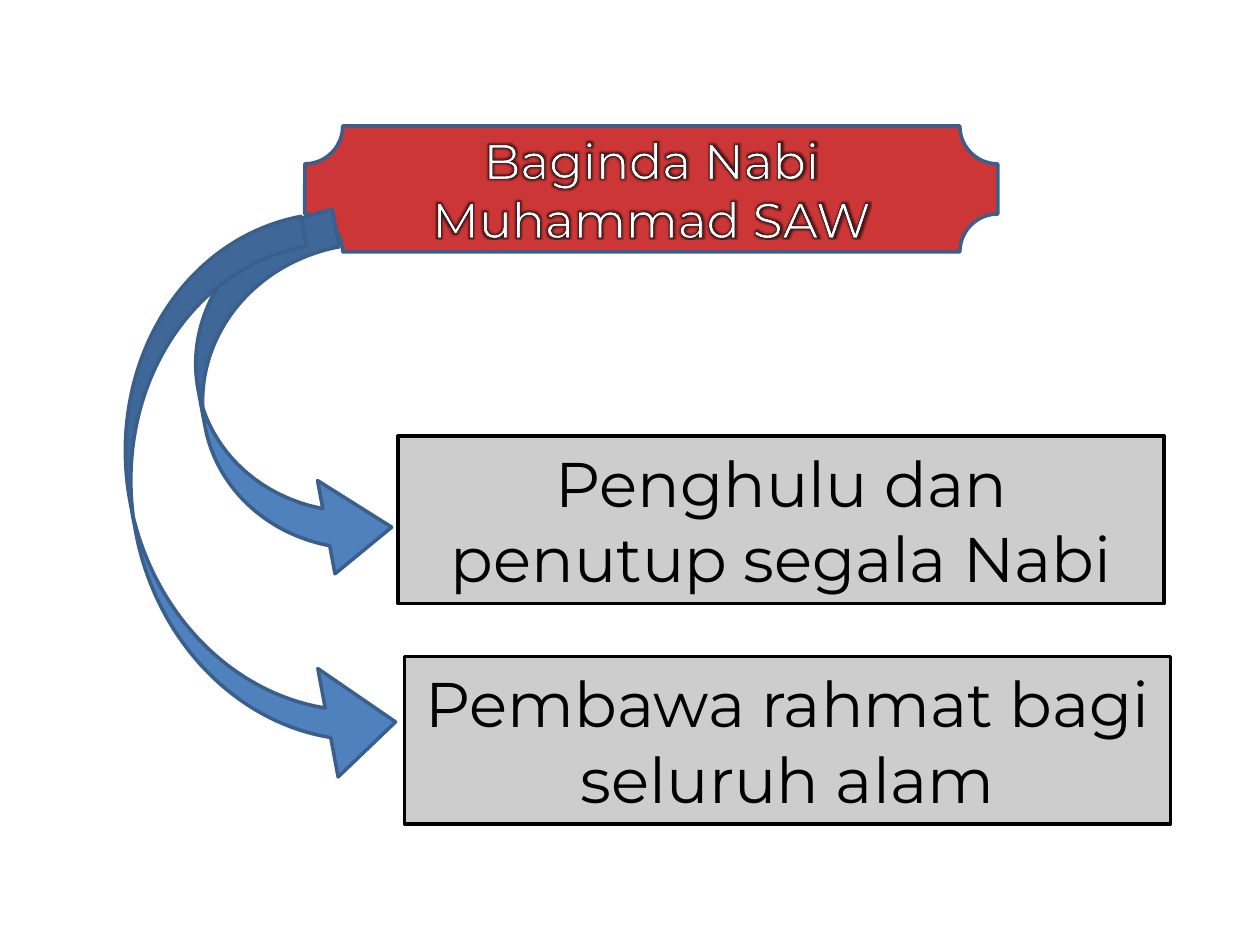
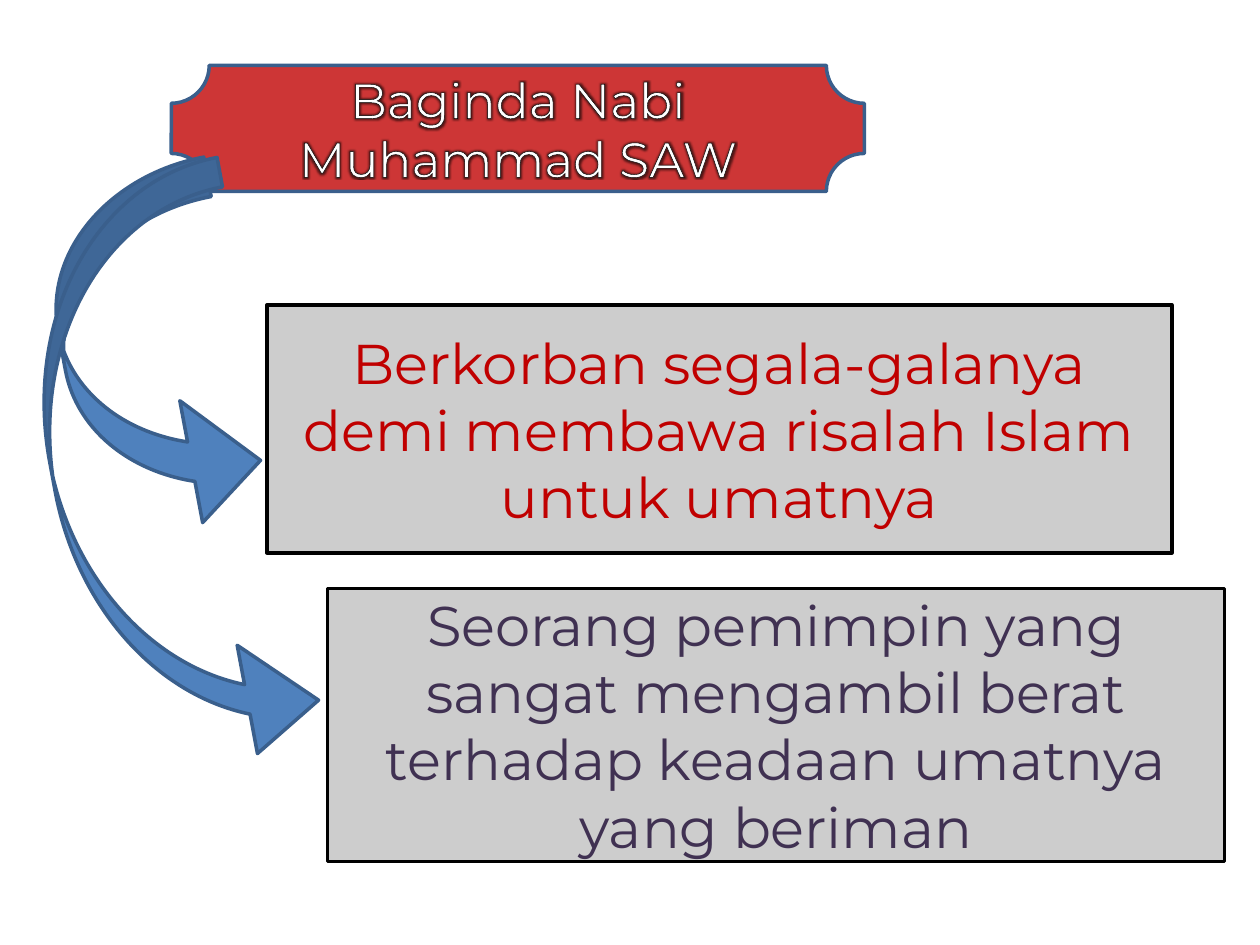
from lxml import etree
from pptx import Presentation
from pptx.dml.color import RGBColor
from pptx.enum.shapes import MSO_SHAPE
from pptx.enum.text import MSO_ANCHOR, PP_ALIGN
from pptx.oxml import parse_xml
from pptx.oxml.ns import qn
from pptx.util import Pt

PLAQUE, RECT, ARROW = MSO_SHAPE.PLAQUE, MSO_SHAPE.RECTANGLE, MSO_SHAPE.CURVED_RIGHT_ARROW
CENTER, MIDDLE = PP_ALIGN.CENTER, MSO_ANCHOR.MIDDLE
FONT = "Montserrat"
RED, BLUE, EDGE, GREY, BLACK, WHITE, PURPLE = (
    "C00000", "4F81BD", "3A5F8C", "BFBFBF", "000000", "FFFFFF", "403152")
NS = 'xmlns:a="http://schemas.openxmlformats.org/drawingml/2006/main"'
TITLE = ["Baginda Nabi", "Muhammad SAW"]
TEXT_OUTLINE = (f'<a:ln {NS} w="9525"><a:solidFill><a:srgbClr val="{BLACK}"/>'
                '</a:solidFill></a:ln>')
TEXT_GLOW = (f'<a:effectLst {NS}><a:glow rad="38100"><a:srgbClr val="{BLACK}">'
             '<a:alpha val="60000"/></a:srgbClr></a:glow></a:effectLst>')


def add_shape(s, kind, box, fill, line, adjustments=(), opacity=100):
    sp = s.shapes.add_shape(kind, *[Pt(v) for v in box])
    sp.shadow.inherit = False
    sp.fill.solid()
    sp.fill.fore_color.rgb = RGBColor.from_string(fill)
    if opacity < 100:
        color = sp.fill._xPr.find(qn("a:solidFill"))[0]
        etree.SubElement(color, qn("a:alpha"), val=str(opacity * 1000))
    sp.line.color.rgb = RGBColor.from_string(line)
    sp.line.width = Pt(2)
    for i, value in enumerate(adjustments):
        sp.adjustments[i] = value
    return sp


def add_text(sp, lines, size, color):
    tf = sp.text_frame
    tf.word_wrap = True
    tf.vertical_anchor = MIDDLE
    tf.text = "\n".join(lines)
    for p in tf.paragraphs:
        p.alignment = CENTER
        p.font.name = FONT
        p.font.size = Pt(size)
        p.font.color.rgb = RGBColor.from_string(color)


# Per slide: title corner, arrows (box, adjustments), cards (box, text, colour)
slides = [
    dict(title=(174.2, 72), size=36,
         arrows=[((115.9, 126.7, 94.3, 211.7), (0.229, 0.575, 0.39)),
                 ((77, 132.5, 126, 325.4), (0.136, 0.5, 0.302))],
         cards=[((231.1, 375.1, 437.8, 95.8), "Pembawa rahmat bagi seluruh alam", BLACK),
                ((227.5, 249.1, 437.8, 95.8), "Penghulu dan penutup segala Nabi", BLACK)]),
    dict(title=(97.9, 37.4), size=32,
         arrows=[((36.7, 97.2, 100.1, 211.7), (0.229, 0.708, 0.39)),
                 ((31, 98.6, 126, 347), (0.136, 0.5, 0.317))],
         cards=[((187.2, 336.2, 512.6, 156.2),
                 "Seorang pemimpin yang sangat mengambil berat "
                 "terhadap keadaan umatnya yang beriman", PURPLE),
                ((152.6, 174.2, 517, 141.8),
                 "Berkorban segala-galanya demi membawa risalah Islam untuk umatnya", RED)]),
]

prs = Presentation()
prs.slide_width, prs.slide_height = Pt(720), Pt(540)

for content in slides:
    s = prs.slides.add_slide(prs.slide_layouts[6])

    # Title plaque with outlined, glowing letters
    sp = add_shape(s, PLAQUE, (*content["title"], 396, 72), RED, EDGE, [0.301], 79)
    add_text(sp, TITLE, 28, WHITE)
    for p in sp.text_frame.paragraphs:
        for r in p.runs:
            r.font.fill.solid()
            r.font.fill.fore_color.rgb = RGBColor.from_string(WHITE)
            rPr = r.font._element
            rPr.insert(0, parse_xml(TEXT_OUTLINE))
            rPr.append(parse_xml(TEXT_GLOW))

    # Curved arrows from the title to the cards
    for box, adjustments in content["arrows"]:
        sp = add_shape(s, ARROW, box, BLUE, EDGE, adjustments)
        sp.rotation = 349.4

    # Grey cards
    for box, text, color in content["cards"]:
        sp = add_shape(s, RECT, box, GREY, BLACK, opacity=77)
        add_text(sp, [text], content["size"], color)

prs.save("out.pptx")
